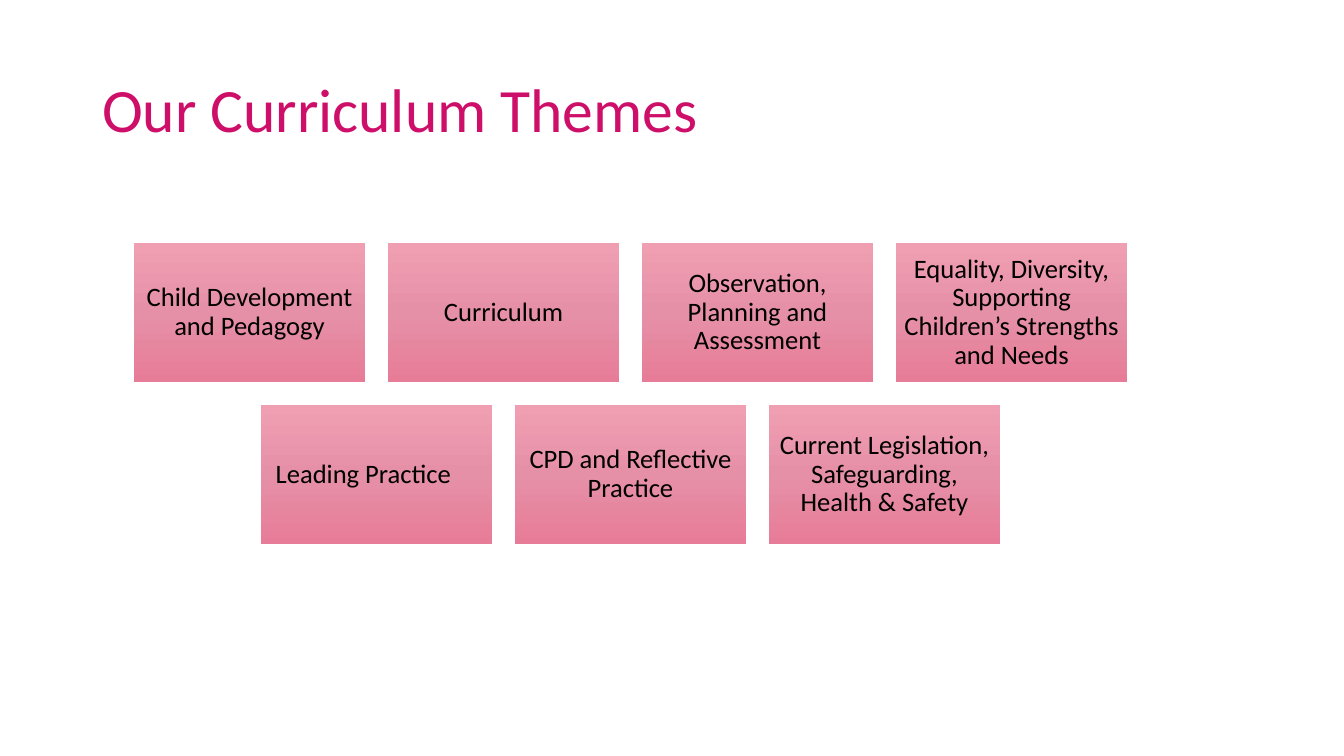
from lxml import etree
from pptx import Presentation, util as u
from pptx.dml.color import RGBColor
from pptx.enum import shapes, text
from pptx.oxml import ns

EMU_PER_PX = 914400 / 100.8
FONT = "Calibri"
COLOURS = {
    "title": "CE0F69",
    "label": "000000",
    "tile_top": "F09EB2",
    "tile_middle": "E690A7",
    "tile_bottom": "E77C98",
}
TILE_STOPS = [(0, "tile_top"), (50, "tile_middle"), (100, "tile_bottom")]
TILE_WIDTH, TILE_HEIGHT, TILE_GAP = 231, 139, 23
TILES_LEFT, TILES_TOP = 134, 243
THEME_ROWS = [
    [
        "Child Development and Pedagogy",
        "Curriculum",
        "Observation, Planning and Assessment",
        "Equality, Diversity, Supporting Children’s Strengths and Needs",
    ],
    [
        "Leading Practice\t",
        "CPD and Reflective Practice",
        "Current Legislation, Safeguarding, Health & Safety",
    ],
]


def px(length):
    return u.Emu(round(length * EMU_PER_PX))


def format_text(box, words, size, colour, align):
    frame = box.text_frame
    frame.word_wrap = True
    frame.auto_size = text.MSO_AUTO_SIZE.NONE
    frame.vertical_anchor = text.MSO_ANCHOR.MIDDLE
    para = frame.paragraphs[0]
    para.text = words
    para.alignment = align
    para.line_spacing = 0.9
    para.font.name = FONT
    para.font.size = u.Pt(size)
    para.font.color.rgb = RGBColor.from_string(COLOURS[colour])


def fill_gradient(box, stops):
    box.fill.gradient()
    box.fill.gradient_angle = 270
    stop_list = box.fill._xPr.find(ns.qn("a:gradFill")).find(ns.qn("a:gsLst"))
    for stop in list(stop_list):
        stop_list.remove(stop)
    for percent, colour in stops:
        stop = etree.SubElement(stop_list, ns.qn("a:gs"), pos=str(percent * 1000))
        etree.SubElement(stop, ns.qn("a:srgbClr"), val=COLOURS[colour])


def add_title(page, words):
    title = page.shapes.title
    title.left, title.top, title.width, title.height = map(px, (92, 40, 1159, 146))
    format_text(title, words, 44, "title", text.PP_ALIGN.LEFT)


def add_tile(page, left, top, words):
    tile = page.shapes.add_shape(
        shapes.MSO_SHAPE.RECTANGLE, px(left), px(top), px(TILE_WIDTH), px(TILE_HEIGHT)
    )
    tile.shadow.inherit = False
    tile.line.fill.background()
    fill_gradient(tile, TILE_STOPS)
    frame = tile.text_frame
    frame.margin_left = frame.margin_right = px(8)
    frame.margin_top = frame.margin_bottom = px(8)
    format_text(tile, words, 19, "label", text.PP_ALIGN.CENTER)


def add_theme_rows(page, rows):
    pitch = TILE_WIDTH + TILE_GAP
    longest = max(len(row) for row in rows)
    for row_number, row in enumerate(rows):
        left = TILES_LEFT + (longest - len(row)) * pitch // 2
        top = TILES_TOP + row_number * (TILE_HEIGHT + TILE_GAP)
        for column, theme in enumerate(row):
            add_tile(page, left + column * pitch, top, theme)


def main():
    deck = Presentation()
    deck.slide_width, deck.slide_height = px(1344), px(756)
    page = deck.slides.add_slide(deck.slide_layouts[5])
    add_title(page, "Our Curriculum Themes")
    add_theme_rows(page, THEME_ROWS)
    deck.save("out.pptx")


if __name__ == "__main__":
    main()
